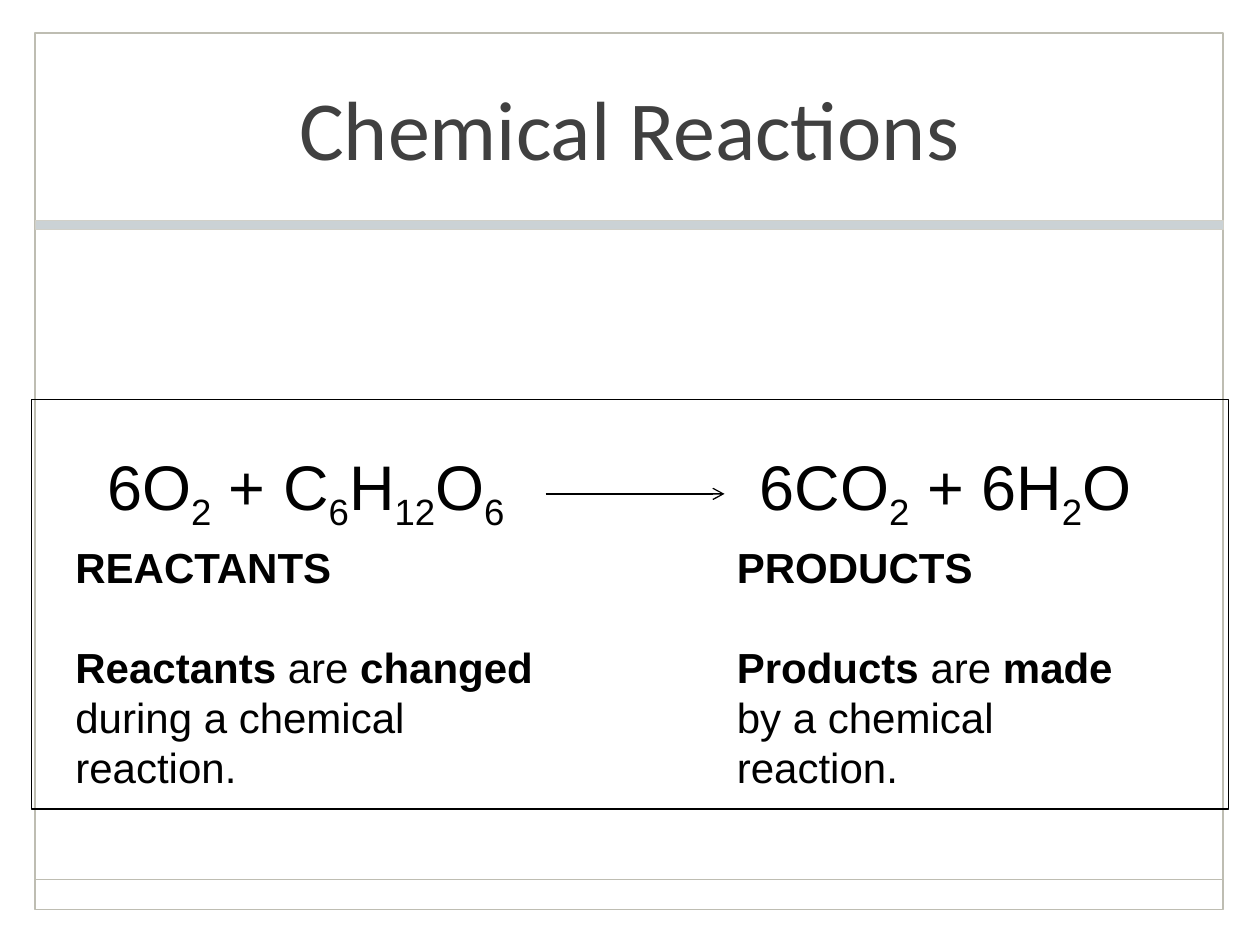
from lxml import etree
from pptx import Presentation
from pptx.dml.color import RGBColor
from pptx.enum.shapes import MSO_CONNECTOR, MSO_SHAPE
from pptx.enum.text import MSO_ANCHOR, PP_ALIGN
from pptx.oxml.ns import qn
from pptx.util import Inches, Pt

RECT, STRAIGHT = MSO_SHAPE.RECTANGLE, MSO_CONNECTOR.STRAIGHT
MIDDLE, CENTER, LEFT = MSO_ANCHOR.MIDDLE, PP_ALIGN.CENTER, PP_ALIGN.LEFT

THEME = {
    "title_font": "Calibri", "body_font": "Arial",
    "title_size": Pt(48), "equation_size": Pt(36), "body_size": Pt(24),
    "title": RGBColor.from_string("404040"),
    "ink": RGBColor.from_string("000000"),
    "frame": RGBColor.from_string("BEBDB2"),
    "band": RGBColor.from_string("CBD2D5"),
    "band_edge": RGBColor.from_string("D1D0C8"),
}

prs = Presentation()
prs.slide_width, prs.slide_height = Inches(10), Inches(7.5)
COL, ROW = prs.slide_width / 40, prs.slide_height / 30
s = prs.slides.add_slide(prs.slide_layouts[5])


def grid(col, row, cols, rows):
    """Turn grid columns and rows into slide lengths."""
    return int(col * COL), int(row * ROW), int(cols * COL), int(rows * ROW)


def add_run(p, text, size, bold=False):
    r = p.add_run()
    r.text = text
    r.font.name, r.font.size, r.font.bold = THEME["body_font"], size, bold
    r.font.color.rgb = THEME["ink"]
    return r


# Frame, title band and the box around the reaction
for box, fill, line, width in (
    ((1.12, 1.04, 37.72, 27.84), None, "frame", 1),
    ((1.12, 7, 37.72, 0.28), "band", "band_edge", 0.25),
    ((1, 12.68, 38, 13), None, "ink", 0.75),
):
    sp = s.shapes.add_shape(RECT, *grid(*box))
    sp.shadow.inherit = False
    if fill:
        sp.fill.solid()
        sp.fill.fore_color.rgb = THEME[fill]
    else:
        sp.fill.background()
    sp.line.color.rgb, sp.line.width = THEME[line], Pt(width)

# Footer rule and reaction arrow
for start, end, row, color, width, arrow in (
    (1.12, 38.84, 27.92, "frame", 1, False),
    (17.32, 23, 15.68, "ink", 0.75, True),
):
    x, y, length, _ = grid(start, row, end - start, 0)
    line = s.shapes.add_connector(STRAIGHT, x, y, x + length, y)
    line.line.color.rgb, line.line.width = THEME[color], Pt(width)
    if arrow:
        etree.SubElement(line.line._get_or_add_ln(), qn("a:tailEnd"), type="arrow")
    etree.SubElement(line._element.spPr, qn("a:effectLst"))

# Title
title = s.shapes.title
title.left, title.top, title.width, title.height = grid(3.92, 1.08, 32.12, 5.88)
tf = title.text_frame
tf.text = "Chemical Reactions"
tf.vertical_anchor = MIDDLE
p = tf.paragraphs[0]
p.alignment = CENTER
p.font.name, p.font.size = THEME["title_font"], THEME["title_size"]
p.font.color.rgb = THEME["title"]

# Equation: a tab stop places the products after the arrow
tf = s.shapes.add_textbox(*grid(1, 14, 37.32, 4.8)).text_frame
tf.word_wrap = True
tf.margin_left = int(2.4 * COL)
p = tf.paragraphs[0]
p.alignment = LEFT
tabs = etree.SubElement(p._p.get_or_add_pPr(), qn("a:tabLst"))
etree.SubElement(tabs, qn("a:tab"), pos=str(int(20.72 * COL)), algn="l")
for text, subscript in (
    ("6O", "2"), (" + C", "6"), ("H", "12"), ("O", "6"),
    ("\t6CO", "2"), (" + 6H", "2"), ("O", ""),
):
    add_run(p, text, THEME["equation_size"])
    if subscript:
        r = add_run(p, subscript, THEME["equation_size"])
        r.font._element.set("baseline", "-25000")

# Explanation under each side of the equation
for col, cols, heading, noun, verb, ending in (
    (2, 16.6, "REACTANTS", "Reactants", "changed", "during a chemical reaction."),
    (23, 14.32, "PRODUCTS", "Products", "made", "by a chemical reaction."),
):
    tf = s.shapes.add_textbox(*grid(col, 17, cols, 8.48)).text_frame
    tf.word_wrap = True
    add_run(tf.paragraphs[0], heading, THEME["body_size"], True)
    p = tf.add_paragraph()
    p.space_before = Pt(28)
    for text, bold in ((noun, True), (" are ", False), (verb, True), (" " + ending, False)):
        add_run(p, text, THEME["body_size"], bold)

prs.save("out.pptx")
